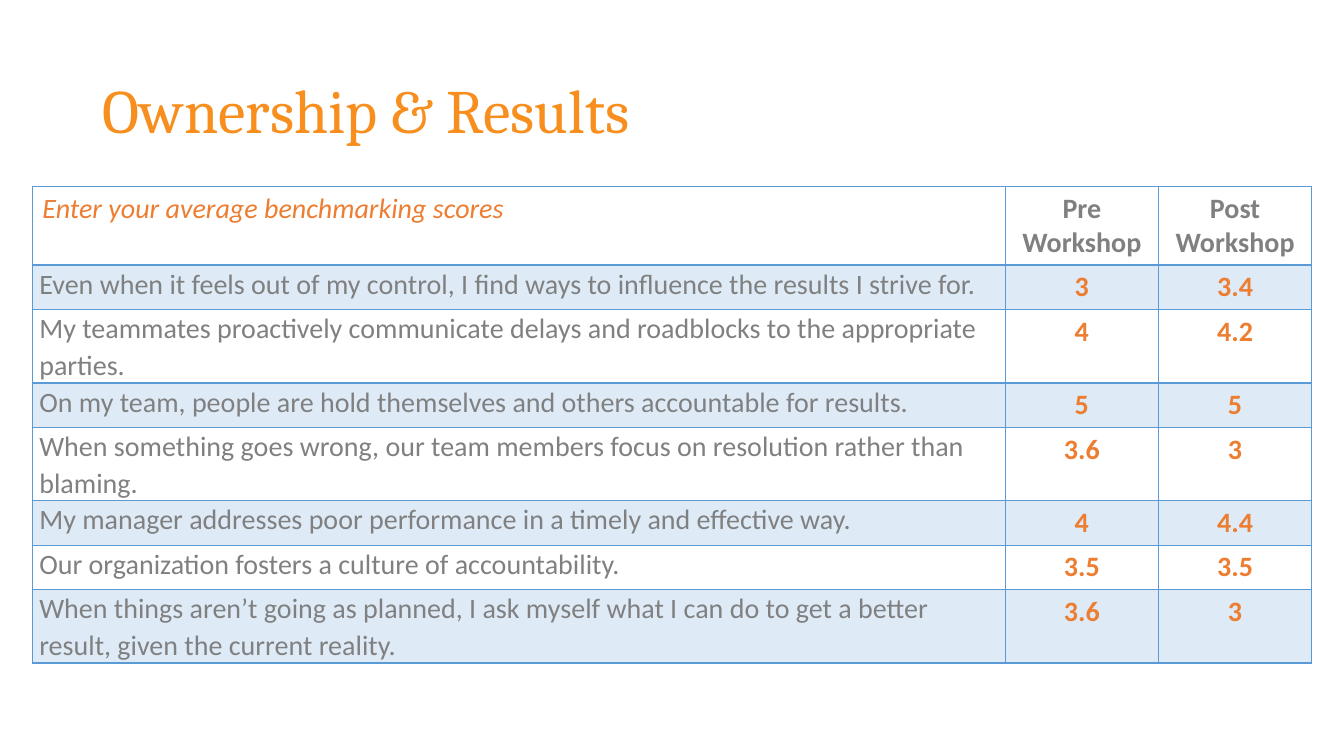
from lxml import etree
from pptx import Presentation
from pptx import util as u
from pptx.dml.color import RGBColor
from pptx.enum import text
from pptx.oxml.ns import qn

TITLE = "Ownership & Results"
HEADER = ("Enter your average benchmarking scores", "Pre Workshop", "Post\nWorkshop")
SCORES = [
    ("Even when it feels out of my control, I find ways to influence the results I strive for.", "3", "3.4"),
    ("My teammates proactively communicate delays and roadblocks to the appropriate parties.", "4", "4.2"),
    ("On my team, people are hold themselves and others accountable for results.", "5", "5"),
    ("When something goes wrong, our team members focus on resolution rather than blaming.", "3.6", "3"),
    ("My manager addresses poor performance in a timely and effective way.", "4", "4.4"),
    ("Our organization fosters a culture of accountability.", "3.5", "3.5"),
    ("When things aren’t going as planned, I ask myself what I can do to get a better result, "
     "given the current reality.", "3.6", "3"),
]
COLUMN_WIDTHS = (9.65, 1.52, 1.52)
ROW_HEIGHT = 0.41
AMBER, ORANGE, GREY, BLUE, PALE_BLUE = "F78E1E", "ED7D31", "808080", "5B9BD5", "DEEBF7"


def set_font(paragraph, name, size, color, bold=False, italic=False):
    font = paragraph.font
    font.name, font.size, font.bold, font.italic = name, u.Pt(size), bold, italic
    font.color.rgb = RGBColor.from_string(color)


def set_borders(cell, bottom):
    """Draw blue lines round a cell; call before the cell is filled."""
    properties = cell._tc.get_or_add_tcPr()
    for side, width in (("L", 1), ("R", 1), ("T", 1), ("B", bottom)):
        line = etree.SubElement(properties, qn(f"a:ln{side}"), w=str(u.Pt(width)))
        fill = etree.SubElement(line, qn("a:solidFill"))
        etree.SubElement(fill, qn("a:srgbClr"), val=BLUE)


def fill_cell(cell, content, row, column):
    is_header, is_statement = row == 0, column == 0
    cell.text = content
    set_borders(cell, bottom=2 if is_header else 1)
    if row % 2:
        cell.fill.solid()
        cell.fill.fore_color.rgb = RGBColor.from_string(PALE_BLUE)
    else:
        cell.fill.background()
    if is_statement and not is_header:
        cell.margin_left = cell.margin_right = u.Inches(0.07)
        cell.margin_top = cell.margin_bottom = 0
    for paragraph in cell.text_frame.paragraphs:
        if not is_statement:
            paragraph.alignment = text.PP_ALIGN.CENTER
        elif not is_header:
            paragraph.line_spacing = 1.07
        color = ORANGE if is_header == is_statement else GREY
        set_font(paragraph, "Calibri", 20, color, bold=not is_statement,
                 italic=is_header and is_statement)


def add_title(page):
    title = page.shapes.title
    title.left, title.top, title.width, title.height = map(u.Inches, (0.92, 0.4, 11.5, 1.45))
    title.text = TITLE
    title.text_frame.vertical_anchor = text.MSO_ANCHOR.MIDDLE
    paragraph = title.text_frame.paragraphs[0]
    paragraph.alignment = text.PP_ALIGN.LEFT
    paragraph.line_spacing = 0.9
    set_font(paragraph, "Cambria", 44, AMBER)


def add_scores(page):
    rows = [HEADER, *SCORES]
    table = page.shapes.add_table(
        len(rows), len(HEADER), u.Inches(0.32), u.Inches(1.85),
        u.Inches(sum(COLUMN_WIDTHS)), u.Inches(ROW_HEIGHT * len(rows))).table
    table.first_row = table.horz_banding = False
    for column, width in zip(table.columns, COLUMN_WIDTHS):
        column.width = u.Inches(width)
    for r, contents in enumerate(rows):
        table.rows[r].height = u.Inches(ROW_HEIGHT)
        for c, content in enumerate(contents):
            fill_cell(table.cell(r, c), content, r, c)


def main():
    deck = Presentation()
    deck.slide_width, deck.slide_height = u.Inches(13.33), u.Inches(7.5)
    page = deck.slides.add_slide(deck.slide_layouts.get_by_name("Title Only"))
    add_title(page)
    add_scores(page)
    deck.save("out.pptx")


if __name__ == "__main__":
    main()
